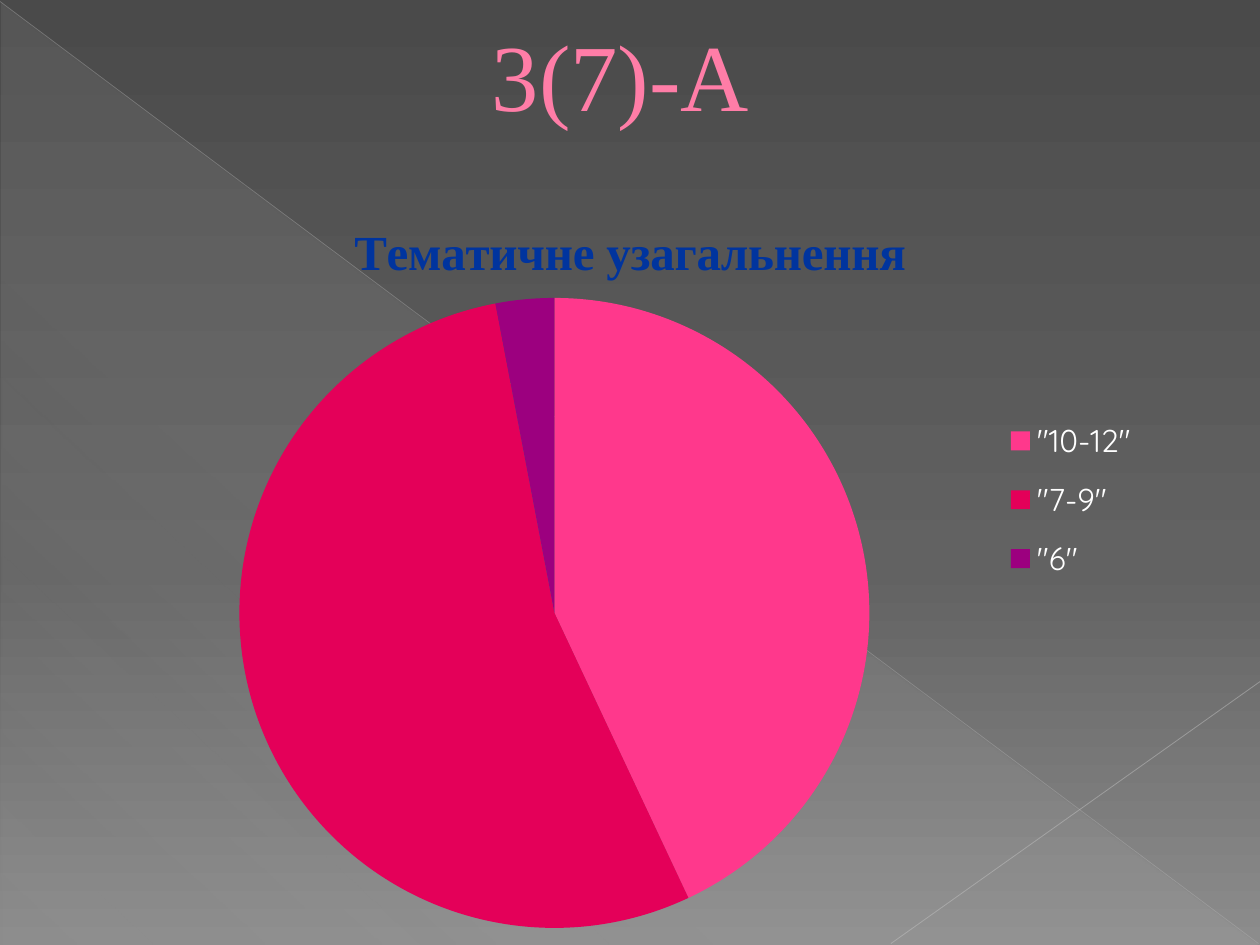
import pptx
import pptx.chart.data
import pptx.dml.color
import pptx.enum.chart
import pptx.enum.shapes
import pptx.enum.text
import pptx.oxml
import pptx.oxml.ns
import pptx.util
from pptx.util import Cm

RGBColor = pptx.dml.color.RGBColor
WHITE = RGBColor(0xFF, 0xFF, 0xFF)
PINK = RGBColor(0xFF, 0x7D, 0xA7)
TITLE_OUTLINE = RGBColor(0xB1, 0x27, 0x61)
CHART_TITLE_BLUE = RGBColor(0x00, 0x34, 0x9E)
DARK_GRAY = RGBColor(0x4A, 0x4A, 0x4A)
MIDDLE_GRAY = RGBColor(0x62, 0x62, 0x62)
LIGHT_GRAY = RGBColor(0x8C, 0x8C, 0x8C)
TRIANGLE_GRAY = RGBColor(0xD2, 0xD2, 0xD2)
LONG_LINE_GRAY = RGBColor(0xBF, 0xBF, 0xBF)
SHORT_LINE_GRAY = RGBColor(0xC6, 0xC6, 0xC6)
SLICE_COLORS = [
    RGBColor(0xFF, 0x38, 0x8C),
    RGBColor(0xE4, 0x00, 0x59),
    RGBColor(0x9C, 0x00, 0x7F),
]
CHART_TITLE = "Тематичне узагальнення"


def set_gradient(parent, stops, angle):
    stop_xml = "".join(
        f'<a:gs pos="{position * 1000}"><a:srgbClr val="{color}">'
        f'<a:alpha val="{opacity * 1000}"/></a:srgbClr></a:gs>'
        for position, color, opacity in stops
    )
    gradient = pptx.oxml.parse_xml(
        f'<a:gradFill {pptx.oxml.ns.nsdecls("a")} rotWithShape="1"><a:gsLst>{stop_xml}</a:gsLst>'
        f'<a:lin ang="{angle * 60000}" scaled="0"/></a:gradFill>'
    )
    solid = parent.find(pptx.oxml.ns.qn("a:solidFill"))
    parent.replace(solid, gradient)


def make_layout(left, top, width, height, target=""):
    return pptx.oxml.parse_xml(
        f'<c:layout {pptx.oxml.ns.nsdecls("c")}><c:manualLayout>{target}'
        '<c:xMode val="edge"/><c:yMode val="edge"/>'
        f'<c:x val="{left}"/><c:y val="{top}"/><c:w val="{width}"/><c:h val="{height}"/>'
        '</c:manualLayout></c:layout>'
    )


presentation = pptx.Presentation()
presentation.slide_width = Cm(25.4)
presentation.slide_height = Cm(19.05)
slide = presentation.slides.add_slide(presentation.slide_layouts[5])

slide.background.fill.solid()
background = slide.background._cSld.find(".//" + pptx.oxml.ns.qn("p:bgPr"))
set_gradient(background, [(0, DARK_GRAY, 100), (60, MIDDLE_GRAY, 100), (100, LIGHT_GRAY, 100)], 90)

triangle = slide.shapes.add_shape(
    pptx.enum.shapes.MSO_SHAPE.RIGHT_TRIANGLE, Cm(0.03), Cm(0.05), Cm(25.35), Cm(19)
)
triangle.shadow.inherit = False
triangle.line.fill.background()
triangle.fill.solid()
set_gradient(
    triangle._element.spPr,
    [(0, TRIANGLE_GRAY, 10), (70, TRIANGLE_GRAY, 8), (100, TRIANGLE_GRAY, 1)],
    133,
)

diagonals = [
    (0, 0.03, 25.37, 19.02, LONG_LINE_GRAY, 0.39, 35),
    (25.4, 13.74, 17.96, 19.02, SHORT_LINE_GRAY, 0.47, 45),
]
for start_x, start_y, end_x, end_y, color, width, opacity in diagonals:
    diagonal = slide.shapes.add_connector(
        pptx.enum.shapes.MSO_CONNECTOR.STRAIGHT, Cm(start_x), Cm(start_y), Cm(end_x), Cm(end_y)
    )
    diagonal.line.width = pptx.util.Pt(width)
    diagonal.line.color.rgb = color
    properties = diagonal._element.spPr
    color_element = properties.find(".//" + pptx.oxml.ns.qn("a:srgbClr"))
    color_element.append(
        pptx.oxml.parse_xml(f'<a:alpha {pptx.oxml.ns.nsdecls("a")} val="{opacity * 1000}"/>')
    )
    properties.append(pptx.oxml.parse_xml(f'<a:effectLst {pptx.oxml.ns.nsdecls("a")}/>'))

title = slide.shapes.title
slide.shapes._spTree.append(title._element)
title.left, title.top, title.width, title.height = Cm(8.31), Cm(0), Cm(9.8), Cm(2.97)
title.text_frame.vertical_anchor = pptx.enum.text.MSO_ANCHOR.MIDDLE
paragraph = title.text_frame.paragraphs[0]
paragraph.alignment = pptx.enum.text.PP_ALIGN.LEFT
paragraph._p.get_or_add_pPr().set("marL", str(Cm(1.35)))
run = paragraph.add_run()
run.text = "3(7)-А"
run.font.name = "Times New Roman"
run.font.size = pptx.util.Pt(54)
run.font.color.rgb = PINK
run._r.rPr.insert(0, pptx.oxml.parse_xml(
    f'<a:ln {pptx.oxml.ns.nsdecls("a")} w="6350"><a:solidFill>'
    f'<a:srgbClr val="{TITLE_OUTLINE}"/></a:solidFill></a:ln>'
))

chart_data = pptx.chart.data.CategoryChartData()
chart_data.categories = ['"10-12"', '"7-9"', '"6"']
chart_data.add_series(CHART_TITLE, [43, 54, 3])
chart = slide.shapes.add_chart(
    pptx.enum.chart.XL_CHART_TYPE.PIE, Cm(0), Cm(3.84), Cm(25.4), Cm(15.21), chart_data
).chart
chart.font.name = "Quicksand"
chart.font.size = pptx.util.Pt(18)
chart.font.color.rgb = WHITE

chart.has_title = True
chart.chart_title.include_in_layout = False
run = chart.chart_title.text_frame.paragraphs[0].add_run()
run.text = CHART_TITLE
run.font.name = "Times New Roman"
run.font.size = pptx.util.Pt(28)
run.font.bold = True
run.font.color.rgb = CHART_TITLE_BLUE

chart.has_legend = True
chart.legend.position = pptx.enum.chart.XL_LEGEND_POSITION.RIGHT
chart.legend.include_in_layout = False
legend_position = chart.legend._element.find(pptx.oxml.ns.qn("c:legendPos"))
legend_position.addnext(make_layout(0.79, 0.28, 0.12, 0.26))

plot = chart.plots[0]
plot.vary_by_categories = True
for index, color in enumerate(SLICE_COLORS):
    point = plot.series[0].points[index]
    point.format.fill.solid()
    point.format.fill.fore_color.rgb = color
    point.format.line.fill.background()

plot_area = chart._chartSpace.chart.plotArea
for layout in plot_area.findall(pptx.oxml.ns.qn("c:layout")):
    plot_area.remove(layout)
plot_area.insert(0, make_layout(0.19, 0.14, 0.5, 0.84, '<c:layoutTarget val="inner"/>'))

presentation.save("out.pptx")
